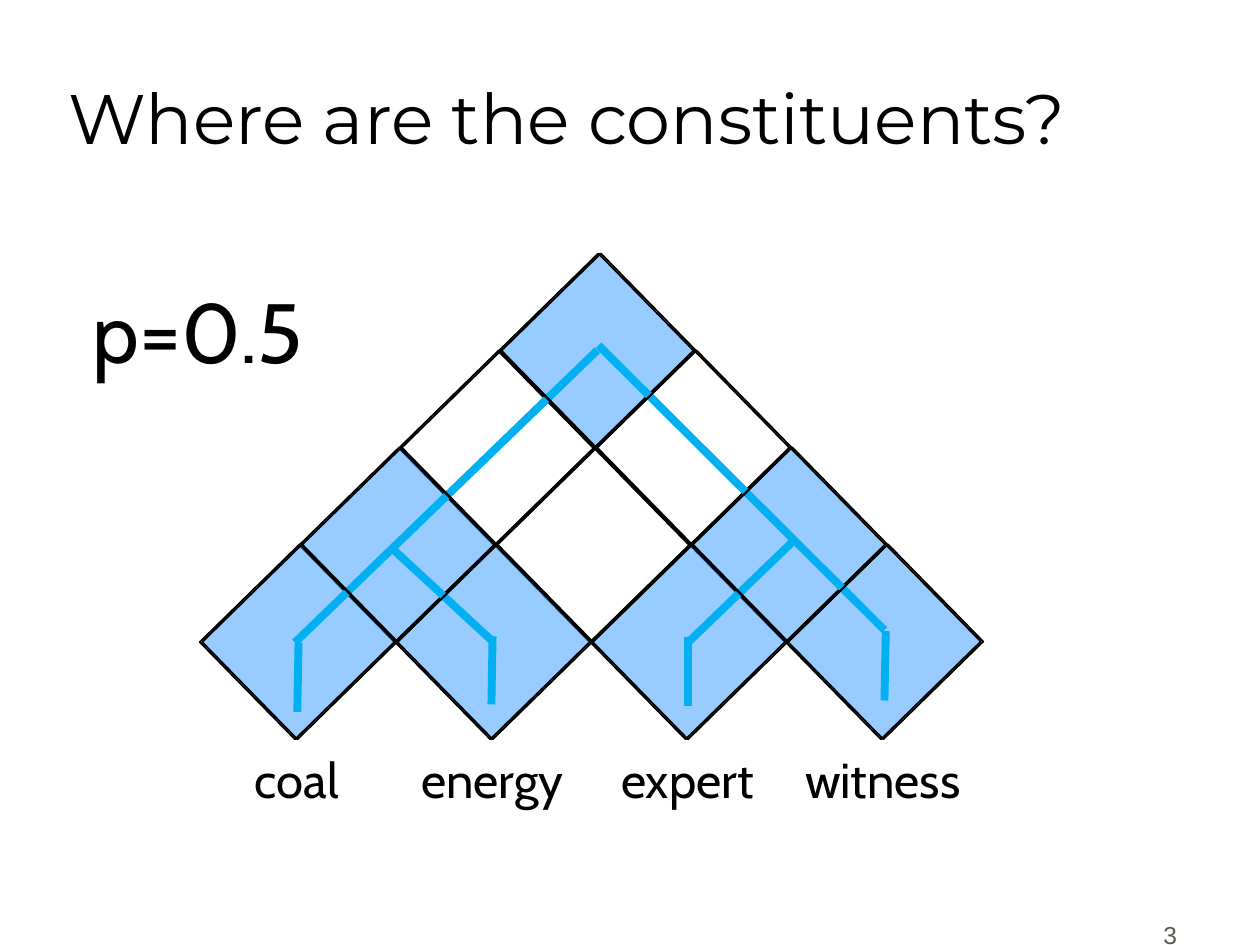
"""Build a slide showing a chart-parsing triangle with its constituent tree."""
from dataclasses import dataclass

from lxml import etree
from pptx import Presentation
from pptx.dml.color import RGBColor
from pptx.enum.shapes import MSO_CONNECTOR, MSO_SHAPE
from pptx.enum.text import MSO_ANCHOR, MSO_AUTO_SIZE, PP_ALIGN
from pptx.oxml.ns import qn
from pptx.util import Pt

LEFT, CENTER, RIGHT = PP_ALIGN.LEFT, PP_ALIGN.CENTER, PP_ALIGN.RIGHT
TOP, BOTTOM = MSO_ANCHOR.TOP, MSO_ANCHOR.BOTTOM
NO_FIT = MSO_AUTO_SIZE.NONE
RECT, STRAIGHT = MSO_SHAPE.RECTANGLE, MSO_CONNECTOR.STRAIGHT


@dataclass(frozen=True)
class Theme:
    ink: RGBColor = RGBColor(0x00, 0x00, 0x00)
    muted: RGBColor = RGBColor(0x5E, 0x57, 0x4E)
    cell: RGBColor = RGBColor(0x33, 0x99, 0xFF)
    branch: RGBColor = RGBColor(0x00, 0xB0, 0xF0)
    title_font: str = "Montserrat"
    body_font: str = "Cabin"
    number_font: str = "Arial"
    title_size: int = 40
    probability_size: int = 48
    word_size: int = 28
    number_size: int = 14
    cell_line: float = 1
    branch_line: float = 4.5


THEME = Theme()
ROWS = 4
CONSTITUENTS = {(0, 0), (2, 0), (0, 2), (3, 0), (2, 1), (1, 2), (0, 3)}
WORDS = ["coal", "energy", "expert", "witness"]
BRANCHES = [
    (168.5, 367.2, 341.3, 200.2),
    (342, 197.3, 505.4, 360),
    (281.5, 366.5, 223.9, 313.2),
    (393.8, 366.5, 452.9, 309.6),
    (169.9, 406.8, 170.6, 367.2),
    (280.8, 402.5, 281.5, 363.6),
    (393.1, 403.2, 393.1, 364.3),
    (505.4, 400.3, 506.2, 360.7),
]


def write(sp, text, font, size, color, align, anchor=TOP, wrap=True):
    """Put one formatted line of text in a shape."""
    tf = sp.text_frame
    tf.text = text
    tf.word_wrap = wrap
    tf.auto_size = NO_FIT
    tf.vertical_anchor = anchor
    p = tf.paragraphs[0]
    p.alignment = align
    r = p.runs[0]
    r.font.name, r.font.size = font, Pt(size)
    r.font.color.rgb = color


def add_title(s, text):
    """Place and fill the title placeholder."""
    sp = s.shapes.title
    sp.left, sp.top, sp.width, sp.height = Pt(31.7), Pt(4.3), Pt(634.3), Pt(90)
    write(sp, text, THEME.title_font, THEME.title_size, THEME.ink, LEFT, BOTTOM)


def add_label(s, x, y, w, h, *args, **kwargs):
    """Add a text box."""
    sp = s.shapes.add_textbox(Pt(x), Pt(y), Pt(w), Pt(h))
    write(sp, *args, **kwargs)


def add_cell(s, x, y, filled):
    """Add one tilted cell of the triangle."""
    sp = s.shapes.add_shape(RECT, Pt(x), Pt(y), Pt(77.8), Pt(79.9))
    sp.rotation = 45.6
    sp.shadow.inherit = False
    sp.line.color.rgb = THEME.ink
    sp.line.width = Pt(THEME.cell_line)
    if filled:
        sp.fill.solid()
        sp.fill.fore_color.rgb = THEME.cell
        color = sp.fill._xPr.find(qn("a:solidFill"))[0]
        etree.SubElement(color, qn("a:alpha")).set("val", "50000")
    else:
        sp.fill.background()


def add_triangle(s, x, y, filled):
    """Add the cells, indexed by steps down the right and the left edge."""
    for left in range(ROWS):
        for right in range(ROWS - left):
            add_cell(s, x + 54.7 * right - 56.9 * left,
                     y + 55.4 * (right + left), (right, left) in filled)


def add_branch(s, x1, y1, x2, y2):
    """Add one straight branch of the tree."""
    c = s.shapes.add_connector(STRAIGHT, Pt(x1), Pt(y1), Pt(x2), Pt(y2))
    c.line.color.rgb = THEME.branch
    c.line.width = Pt(THEME.branch_line)
    etree.SubElement(c._element.spPr, qn("a:effectLst"))


def main():
    """Build and save the slide."""
    prs = Presentation()
    prs.slide_width, prs.slide_height = Pt(720), Pt(540)
    s = prs.slides.add_slide(prs.slide_layouts[5])
    add_title(s, "Where are the constituents?")
    add_label(s, 529.9, 509.8, 149.8, 36, "3", THEME.number_font,
              THEME.number_size, THEME.muted, RIGHT, BOTTOM)
    add_triangle(s, 301.7, 160.6, CONSTITUENTS)
    for i, word in enumerate(WORDS):
        add_label(s, 113.8 + 111.6 * i, 424.8, 111.6, 50.4, word,
                  THEME.body_font, THEME.word_size, THEME.ink, CENTER)
    for branch in BRANCHES:
        add_branch(s, *branch)
    add_label(s, 41, 156.2, 144, 65.5, "p=0.5", THEME.body_font,
              THEME.probability_size, THEME.ink, CENTER, wrap=False)
    add_triangle(s, 303.1, 160.6, set())
    prs.save("out.pptx")


if __name__ == "__main__":
    main()
